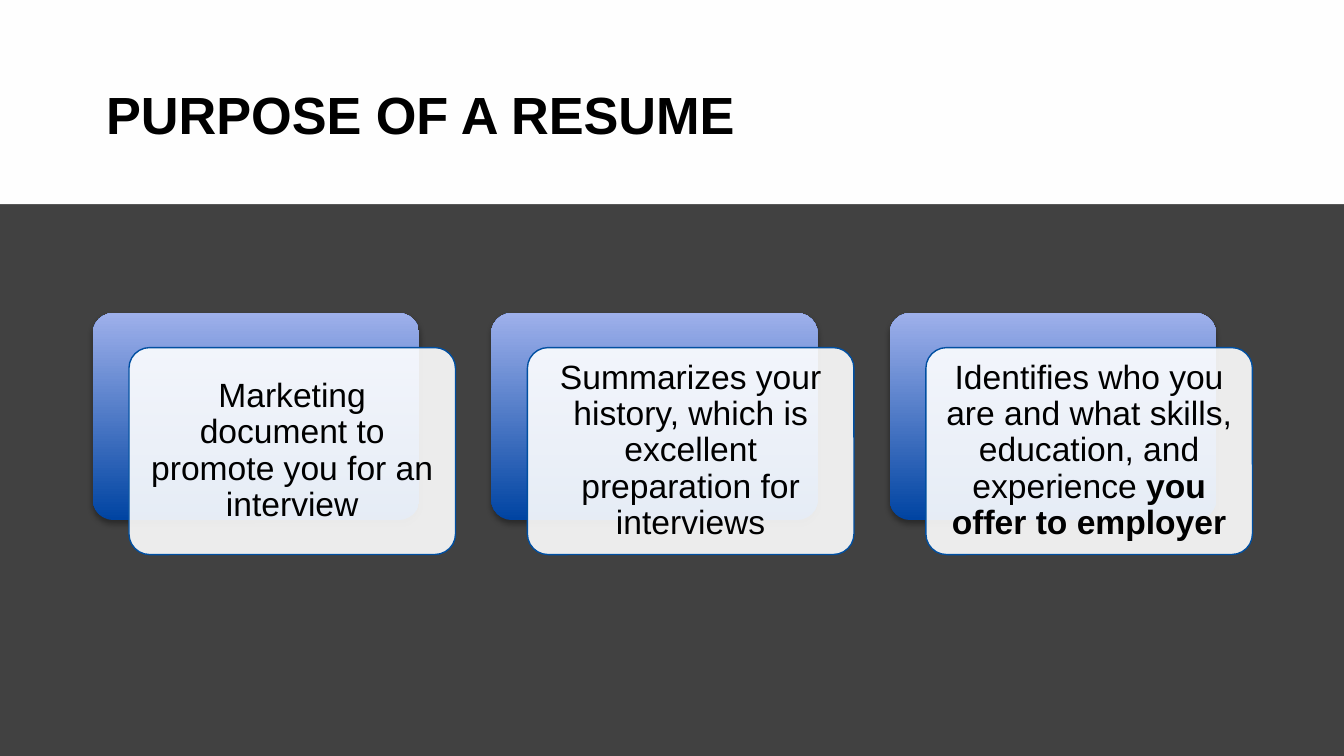
"""Build the slide on the purpose of a resume."""
from lxml import etree
from pptx import Presentation
from pptx.dml.color import RGBColor
from pptx.enum.shapes import MSO_SHAPE
from pptx.enum.text import MSO_ANCHOR, MSO_AUTO_SIZE, PP_ALIGN
from pptx.oxml.ns import qn
from pptx.util import Inches, Pt

RECT, ROUND = MSO_SHAPE.RECTANGLE, MSO_SHAPE.ROUNDED_RECTANGLE
MIDDLE, NO_FIT = MSO_ANCHOR.MIDDLE, MSO_AUTO_SIZE.NONE
LEFT, CENTER = PP_ALIGN.LEFT, PP_ALIGN.CENTER

TITLE = "PURPOSE OF A RESUME"
PURPOSES = [
    [("Marketing document to promote you for an interview", False)],
    [("Summarizes your history, which is excellent preparation for interviews", False)],
    [("Identifies who you are and what skills, education, and experience ", False),
     ("you offer to employer", True)],
]

WIDTH = 10
HEIGHT = WIDTH * 9 / 16
BAND_H = 1.52
MARGIN = 0.69
CARD_W, CARD_H = 2.43, 1.54
CARD_TOP = 2.33
STEP = CARD_W * 1.22
SHIFT_X, SHIFT_Y = CARD_W / 9, CARD_H / 6
FONT = "Arial"


def rgb(value):
    return RGBColor.from_string(value)


def style_run(r, size, bold):
    r.font.name, r.font.size, r.font.bold = FONT, Pt(size), bold
    r.font.color.rgb = rgb("000000")


def add_block(s, shape, x, y, w, h):
    sp = s.shapes.add_shape(shape, *map(Inches, (x, y, w, h)))
    sp.shadow.inherit = False
    sp.fill.solid()
    sp.line.fill.background()
    if shape == ROUND:
        sp.adjustments[0] = 0.1
    return sp


def add_shadow(sp):
    effects = sp._element.spPr.find(qn("a:effectLst"))
    shadow = etree.SubElement(effects, qn("a:outerShdw"), blurRad=str(Pt(3.1)),
                              dist=str(Pt(1.8)), dir="5400000", rotWithShape="0")
    color = etree.SubElement(shadow, qn("a:srgbClr"), val="000000")
    etree.SubElement(color, qn("a:alpha"), val="35000")


def add_backing(s, x, y):
    sp = add_block(s, ROUND, x, y, CARD_W, CARD_H)
    sp.fill.gradient()
    sp.fill.gradient_angle = 90
    for stop, (position, color) in zip(sp.fill.gradient_stops, [(0, "0044A2"), (1, "9EB0EB")]):
        stop.position, stop.color.rgb = position, rgb(color)
    add_shadow(sp)


def add_card(s, x, y, runs):
    sp = add_block(s, ROUND, x, y, CARD_W, CARD_H)
    sp.fill.fore_color.rgb = rgb("FFFFFF")
    color = sp._element.spPr.find(qn("a:solidFill")).find(qn("a:srgbClr"))
    etree.SubElement(color, qn("a:alpha"), val="90000")
    sp.line.color.rgb, sp.line.width = rgb("004FA1"), Pt(0.75)
    tf = sp.text_frame
    tf.word_wrap, tf.vertical_anchor = True, MIDDLE
    tf.margin_left = tf.margin_right = tf.margin_top = tf.margin_bottom = Inches(0.07)
    p = tf.paragraphs[0]
    p.alignment, p.line_spacing = CENTER, 0.9
    for text, bold in runs:
        r = p.add_run()
        r.text = text
        style_run(r, 18, bold)


def add_title(s):
    band = add_block(s, RECT, 0, 0, WIDTH, BAND_H)
    band.fill.fore_color.rgb = rgb("FEFEFE")
    title = s.shapes.title
    title._element.addprevious(band._element)
    title.left, title.top, title.width, title.height = map(
        Inches, (MARGIN, 0.3, WIDTH - 2 * MARGIN, 1.09))
    tf = title.text_frame
    tf.text = TITLE
    tf.auto_size, tf.vertical_anchor = NO_FIT, MIDDLE
    p = tf.paragraphs[0]
    p.alignment = LEFT
    style_run(p.runs[0], 28, True)


def main():
    prs = Presentation()
    prs.slide_width, prs.slide_height = Inches(WIDTH), Inches(HEIGHT)
    s = prs.slides.add_slide(prs.slide_layouts[5])
    s.background.fill.solid()
    s.background.fill.fore_color.rgb = rgb("414141")
    add_title(s)
    for i, runs in enumerate(PURPOSES):
        x = MARGIN + i * STEP
        add_backing(s, x, CARD_TOP)
        add_card(s, x + SHIFT_X, CARD_TOP + SHIFT_Y, runs)
    prs.save("out.pptx")


if __name__ == "__main__":
    main()
